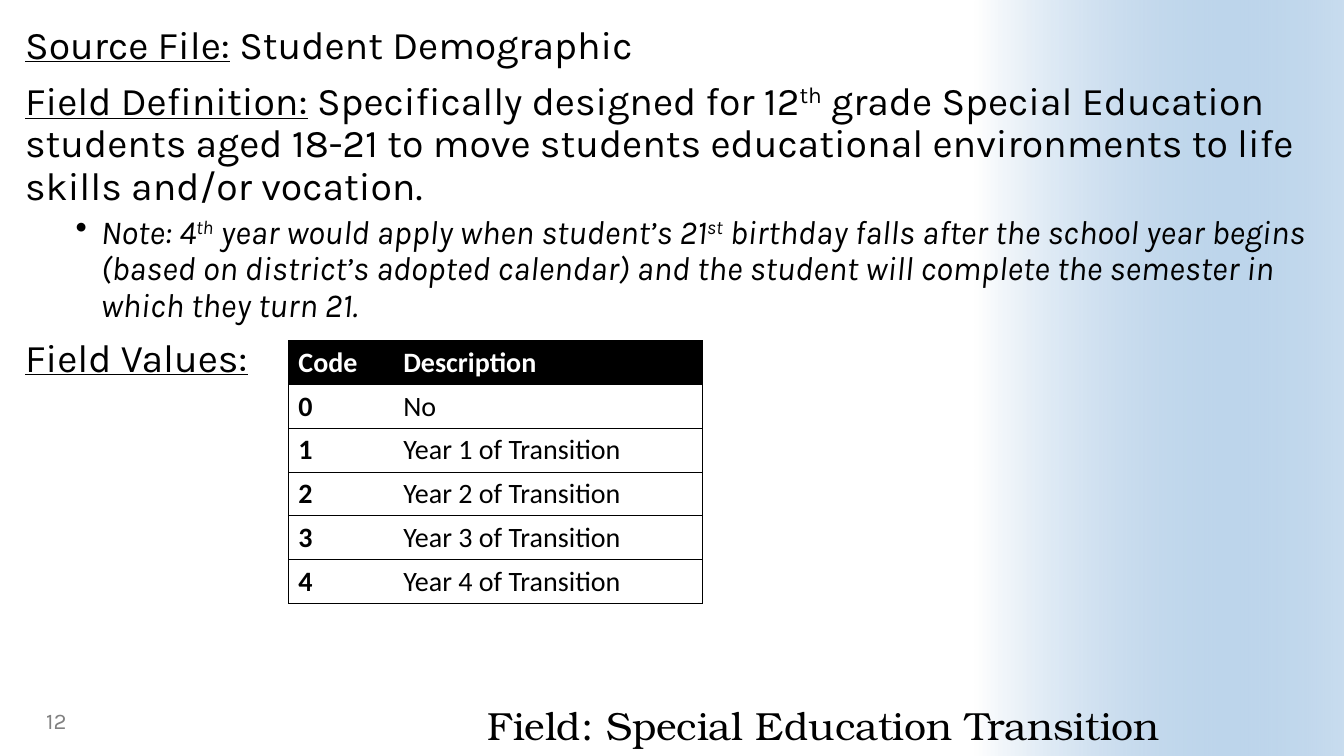
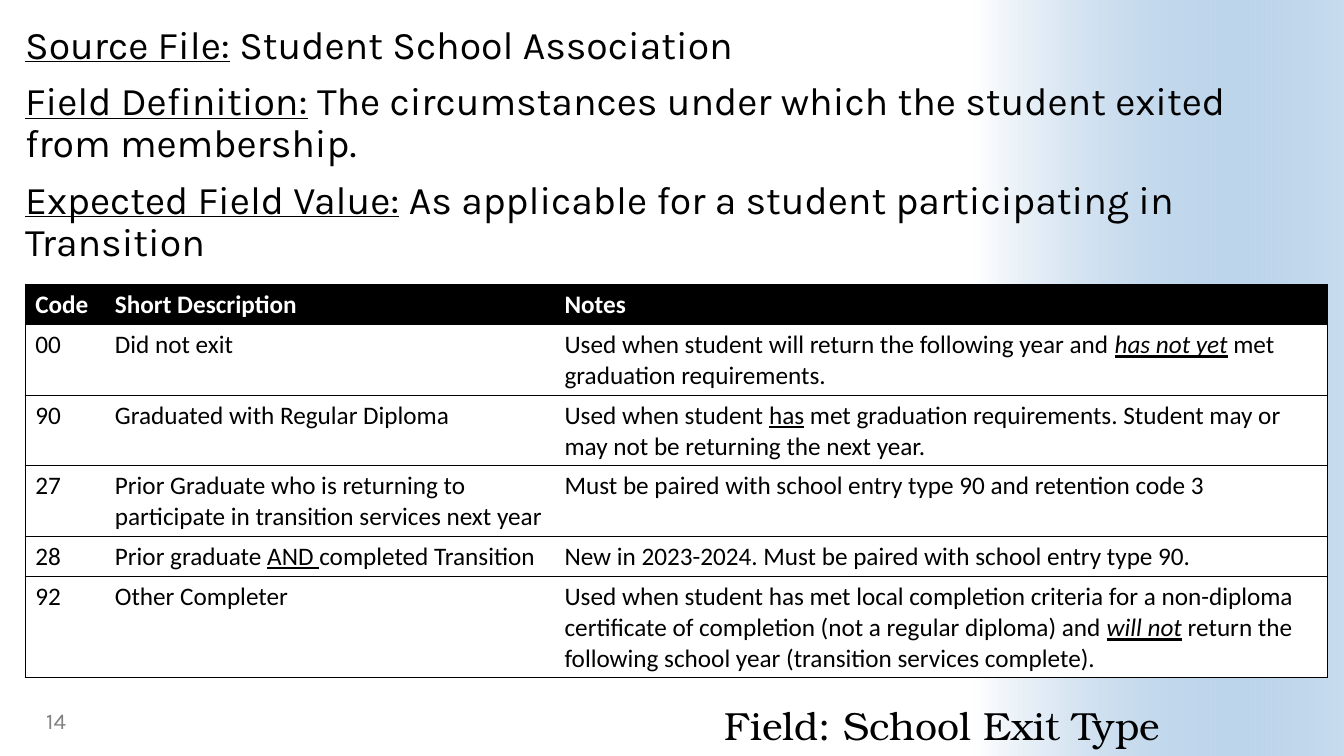
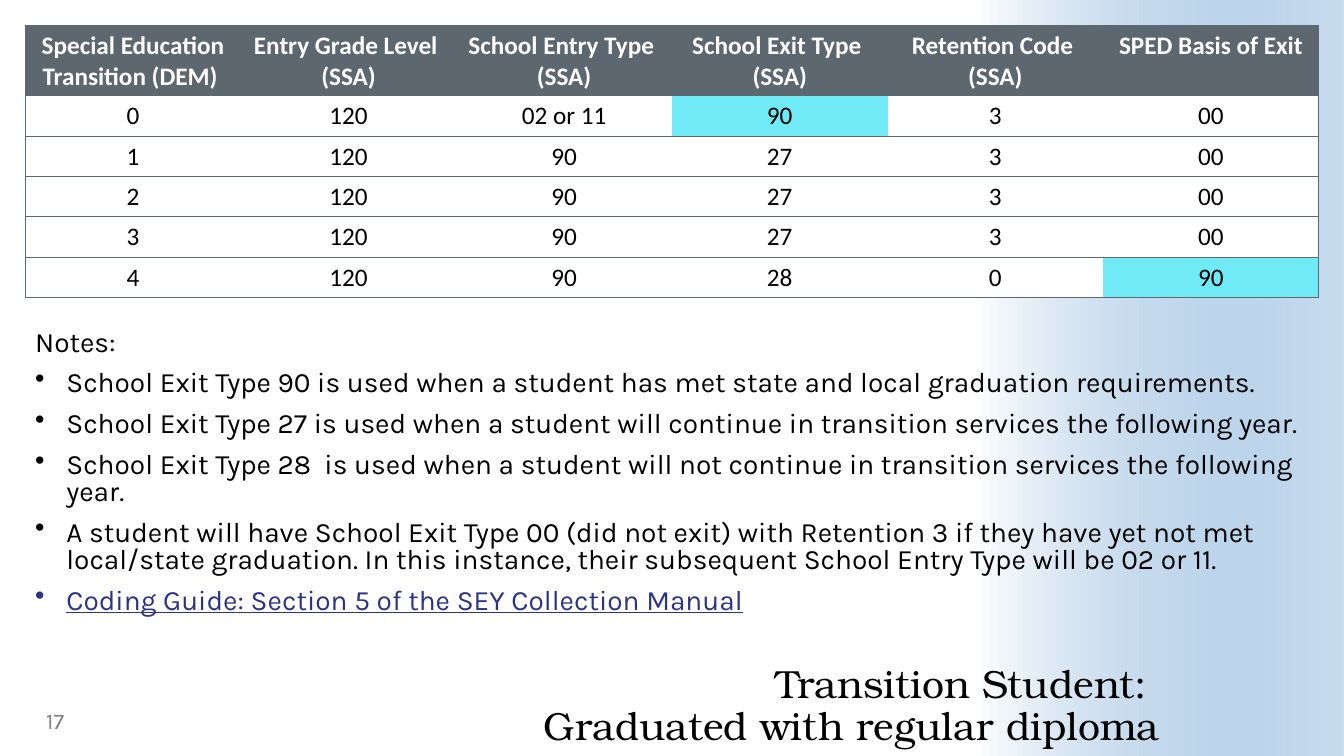
from dataclasses import dataclass

from lxml.etree import SubElement
from pptx import Presentation
from pptx.dml.color import RGBColor
from pptx.enum.shapes import MSO_SHAPE
from pptx.enum.text import MSO_ANCHOR, PP_ALIGN
from pptx.oxml.ns import qn
from pptx.util import Inches, Pt


@dataclass(frozen=True)
class Theme:
    """Colours, fonts and type sizes shared by all slides."""
    ink: str = "000000"
    paper: str = "FFFFFF"
    band: str = "488BC9"
    slate: str = "5D6770"
    highlight: str = "71EAF7"
    link: str = "2C3384"
    muted: str = "808080"
    title_font: str = "TeX Gyre Bonum"
    body_font: str = "Karla"
    table_font: str = "Calibri"
    title_size: int = 28
    number_size: int = 16


T = Theme()


@dataclass(frozen=True)
class Style:
    """Look of one kind of paragraph."""
    size: int
    font: str = T.body_font
    color: str = T.ink
    align: PP_ALIGN = PP_ALIGN.LEFT
    line: float = 1.0
    before: int = 0
    flags: str = ""
    level: int = 0
    margin: float = 0
    hang: float = 0


TITLE = Style(T.title_size, T.title_font, align=PP_ALIGN.RIGHT, line=0.9)
NUMBER = Style(T.number_size, color=T.muted)
FIELD = Style(28, line=0.9, before=10)
REMARK = Style(24, line=0.9, before=5, flags="i", level=1, margin=0.75, hang=0.25)
NOTE = Style(20, line=0.8, before=10)
BULLET = Style(20, line=0.8, before=10, margin=0.31, hang=0.31)
LINK = Style(20, color=T.link, line=0.8, before=10, flags="u", margin=0.31, hang=0.31)


def rgb(color):
    """Turn a hex string into a colour."""
    return RGBColor.from_string(color)


def add_run(p, text, style, flags, color):
    """Add one run; flags are b, i, u and ^ for superscript."""
    r = p.add_run()
    r.text = text
    r.font.name = style.font
    r.font.size = Pt(style.size)
    r.font.color.rgb = rgb(color)
    r.font.bold = "b" in flags
    r.font.italic = "i" in flags
    r.font.underline = "u" in flags
    if "^" in flags:
        r._r.get_or_add_rPr().set("baseline", "30000")


def fill_paragraph(p, runs, style, color=None, flags=""):
    """Format a paragraph and add its runs, given as text or (text, flags)."""
    p.alignment = style.align
    p.line_spacing = style.line
    p.level = style.level
    if style.hang:
        pPr = p._p.get_or_add_pPr()
        pPr.set("marL", str(Inches(style.margin)))
        pPr.set("indent", str(-Inches(style.hang)))
        SubElement(pPr, qn("a:buChar"), char="•")
    for run in [runs] if isinstance(runs, str) else runs:
        text, extra = (run, "") if isinstance(run, str) else run
        for i, line in enumerate(text.split("\n")):
            if i:
                p.add_line_break()
            add_run(p, line, style, style.flags + flags + extra, color or style.color)


def add_text(s, box, paragraphs, anchor=MSO_ANCHOR.TOP, inset=True):
    """Add a text box holding (style, runs) paragraphs."""
    tf = s.shapes.add_textbox(*map(Inches, box)).text_frame
    tf.word_wrap = True
    tf.vertical_anchor = anchor
    if not inset:
        tf.margin_left = tf.margin_top = tf.margin_right = tf.margin_bottom = 0
    for i, (style, runs) in enumerate(paragraphs):
        p = tf.add_paragraph() if i else tf.paragraphs[0]
        fill_paragraph(p, runs, style)
        if i:
            p.space_before = Pt(style.before)


def add_band(s):
    """Add the gradient band along the right edge."""
    sp = s.shapes.add_shape(MSO_SHAPE.RECTANGLE, *map(Inches, (7.75, 1.92, 7.5, 3.66)))
    sp.rotation = 270
    sp.shadow.inherit = False
    sp.line.fill.background()
    sp.fill.gradient()
    sp.fill.gradient_angle = 270
    for stop, color, position in zip(sp.fill.gradient_stops, (T.paper, T.band), (0, 1)):
        stop.color.rgb = rgb(color)
        stop.position = position
    colors = list(sp._element.spPr.iter(qn("a:srgbClr")))
    SubElement(colors[-1], qn("a:alpha"), val="30000")


def add_slide(prs, title, number):
    """Add a slide with band, title and slide number."""
    s = prs.slides.add_slide(prs.slide_layouts[6])
    add_band(s)
    add_text(s, (4.26, 6.45, 7.24, 0.98), [(TITLE, title)], MSO_ANCHOR.BOTTOM, inset=False)
    add_text(s, (0.36, 6.95, 3, 0.4), [(NUMBER, number)], MSO_ANCHOR.MIDDLE)
    return s


def set_borders(cell, color, width, sides):
    """Draw the named cell sides and clear the others."""
    tcPr = cell._tc.get_or_add_tcPr()
    for side in "LRTB":
        ln = SubElement(tcPr, qn(f"a:ln{side}"), w=str(Pt(width)))
        if side in sides:
            SubElement(SubElement(ln, qn("a:solidFill")), qn("a:srgbClr"), val=color)
        else:
            SubElement(ln, qn("a:noFill"))


def add_grid(s, left, top, widths, heights, rows, style, line, weight,
             bold_codes=False, marked=()):
    """Add a ruled table with a dark header, and highlight the marked cells."""
    frame = s.shapes.add_table(len(rows), len(widths), Inches(left), Inches(top),
                               Inches(sum(widths)), Inches(sum(heights)))
    table = frame.table
    table.horz_banding = False
    for column, width in zip(table.columns, widths):
        column.width = Inches(width)
    for row, height in zip(table.rows, heights):
        row.height = Inches(height)
    last = len(widths) - 1
    for i, row in enumerate(rows):
        for j, runs in enumerate(row):
            cell = table.cell(i, j)
            sides = "TB" + "L" * (j == 0) + "R" * (j == last)
            set_borders(cell, line, weight, sides)
            cell.fill.solid()
            fill = line if i == 0 else T.highlight if (i, j) in marked else T.paper
            cell.fill.fore_color.rgb = rgb(fill)
            bold = i == 0 or (bold_codes and j == 0)
            fill_paragraph(cell.text_frame.paragraphs[0], runs, style,
                           T.ink if i else T.paper, "b" if bold else "")


def build_transition(prs):
    """Build the Special Education Transition slide."""
    s = add_slide(prs, "Field: Special Education Transition", "12")
    add_text(s, (0.25, 0.25, 12.83, 5.48), [
        (FIELD, [("Source File:", "u"), " Student Demographic"]),
        (FIELD, [("Field Definition:", "u"), " Specifically designed for 12", ("th", "^"),
                 " grade Special Education students aged 18-21 to move students "
                 "educational environments to life skills and/or vocation."]),
        (REMARK, ["Note: 4", ("th", "^"), " year would apply when student’s 21", ("st", "^"),
                  " birthday falls after the school year begins (based on district’s "
                  "adopted calendar) and the student will complete the semester in "
                  "which they turn 21."]),
        (FIELD, [("Field Values:", "u")]),
    ], inset=False)
    rows = [("Code", "Description"), ("0", "No")]
    rows += [(str(n), f"Year {n} of Transition") for n in range(1, 5)]
    add_grid(s, 2.86, 3.38, [1.04, 3.07], [2.6 / 6] * 6, rows,
             Style(20, T.table_font), T.ink, 0.5, bold_codes=True)


def build_exit_type(prs):
    """Build the School Exit Type slide."""
    s = add_slide(prs, "Field: School Exit Type", "14")
    add_text(s, (0.25, 0.25, 12.83, 6.49), [
        (FIELD, [("Source File:", "u"), " Student School Association"]),
        (FIELD, [("Field Definition:", "u"),
                 " The circumstances under which the student exited from membership."]),
        (FIELD, [("Expected Field Value:", "u"),
                 " As applicable for a student participating in Transition"]),
    ], inset=False)
    rows = [
        ("Code", "Short Description", "Notes"),
        ("00", "Did not exit",
         ["Used when student will return the following year and ", ("has not yet", "iu"),
          " met graduation requirements."]),
        ("90", "Graduated with Regular Diploma",
         ["Used when student ", ("has", "u"),
          " met graduation requirements. Student may or may not be returning the next year."]),
        ("27", "Prior Graduate who is returning to participate in transition services next year",
         "Must be paired with school entry type 90 and retention code 3"),
        ("28", ["Prior graduate ", ("AND ", "u"), "completed Transition"],
         "New in 2023-2024. Must be paired with school entry type 90."),
        ("92", "Other Completer",
         ["Used when student has met local completion criteria for a non-diploma "
          "certificate of completion (not a regular diploma) and ", ("will not", "iu"),
          " return the following school year (transition services complete)."]),
    ]
    add_grid(s, 0.25, 2.82, [0.79, 4.46, 7.67], [0.4, 0.7, 0.7, 0.7, 0.4, 1], rows,
             Style(18, T.table_font), T.ink, 1)


def build_graduate(prs):
    """Build the slide on students graduated with a regular diploma."""
    s = add_slide(prs, "Transition Student: \nGraduated with regular diploma", "17")
    rows = [
        ("Special Education Transition (DEM) ", "Entry Grade Level \n(SSA)",
         "School Entry Type \n(SSA)", "School Exit Type \n(SSA)",
         "Retention Code \n(SSA)", "SPED Basis of Exit"),
        ("0", "120", "02 or 11", "90", "3", "00"),
        *[(str(n), "120", "90", "27", "3", "00") for n in range(1, 4)],
        ("4", "120", "90", "28", "0", "90"),
    ]
    add_grid(s, 0.25, 0.25, [12.83 / 6] * 6, [0.7] + [0.4] * 5, rows,
             Style(18, T.table_font, align=PP_ALIGN.CENTER), T.slate, 1,
             marked={(1, 3), (5, 5)})
    add_text(s, (0.25, 3.23, 12.83, 3.04), [
        (NOTE, "Notes:"),
        (BULLET, "School Exit Type 90 is used when a student has met state and local "
                 "graduation requirements."),
        (BULLET, "School Exit Type 27 is used when a student will continue in transition "
                 "services the following year."),
        (BULLET, "School Exit Type 28  is used when a student will not continue in "
                 "transition services the following year."),
        (BULLET, "A student will have School Exit Type 00 (did not exit) with Retention 3 "
                 "if they have yet not met local/state graduation. In this instance, their "
                 "subsequent School Entry Type will be 02 or 11."),
        (LINK, "Coding Guide: Section 5 of the SEY Collection Manual"),
    ])


def main():
    """Build and save the presentation."""
    prs = Presentation()
    prs.slide_width, prs.slide_height = Inches(13.33), Inches(7.5)
    build_transition(prs)
    build_exit_type(prs)
    build_graduate(prs)
    prs.save("out.pptx")


if __name__ == "__main__":
    main()
